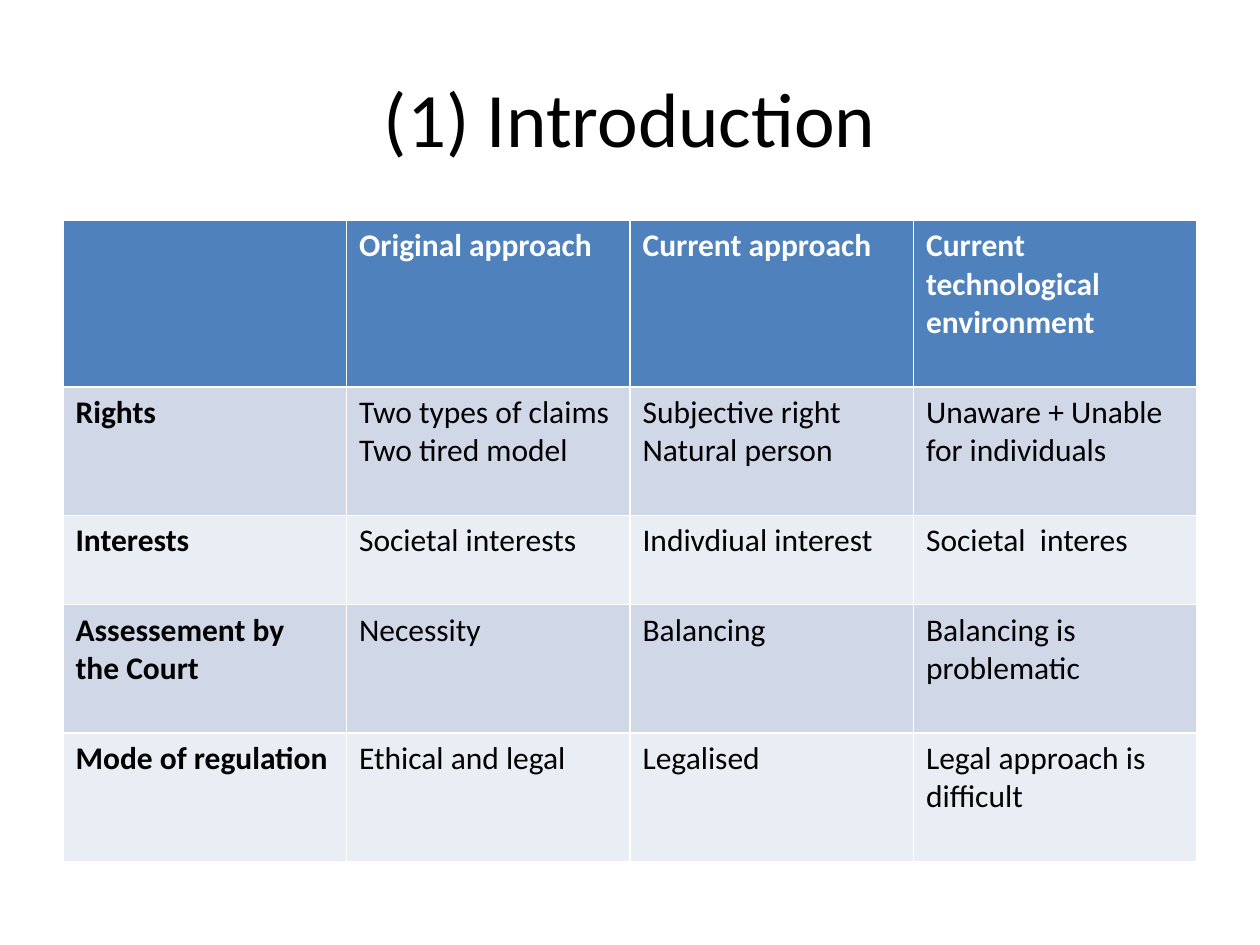
import pptx
import pptx.util
import pptx.dml.color
import pptx.enum.text

Inches = pptx.util.Inches
Pt = pptx.util.Pt
RGBColor = pptx.dml.color.RGBColor

BLACK = RGBColor(0x00, 0x00, 0x00)
WHITE = RGBColor(0xFF, 0xFF, 0xFF)
BLUE = RGBColor(0x4F, 0x81, 0xBD)
BANDS = [RGBColor(0xE9, 0xED, 0xF4), RGBColor(0xD0, 0xD8, 0xE8)]
FONT = "Calibri"

ROWS = [
    ["", "Original approach", "Current approach", "Current technological environment"],
    ["Rights", "Two types of claims\nTwo tired model", "Subjective right Natural person",
     "Unaware + Unable for individuals"],
    ["Interests", "Societal interests", "Indivdiual interest", "Societal  interes"],
    ["Assessement by the Court", "Necessity", "Balancing", "Balancing is problematic"],
    ["Mode of regulation", "Ethical and legal", "Legalised", "Legal approach is difficult"],
]
HEIGHTS = [1.32, 1.02, 0.71, 1.02, 1.02]


def style(para, size, color, bold=False):
    para.font.name = FONT
    para.font.size = Pt(size)
    para.font.color.rgb = color
    para.font.bold = bold


deck = pptx.Presentation()
deck.slide_width, deck.slide_height = Inches(10), Inches(7.5)
slide = deck.slides.add_slide(deck.slide_layouts[5])

title = slide.shapes.title
title.left, title.top = Inches(0.5), Inches(0.3)
title.width, title.height = Inches(9), Inches(1.25)
title.text_frame.text = "(1) Introduction"
title.text_frame.vertical_anchor = pptx.enum.text.MSO_ANCHOR.MIDDLE
head = title.text_frame.paragraphs[0]
head.alignment = pptx.enum.text.PP_ALIGN.CENTER
style(head, 44, BLACK)

# The default table style draws the white rules between cells.
table = slide.shapes.add_table(
    len(ROWS), len(ROWS[0]), Inches(0.5), Inches(1.75), Inches(9), Inches(sum(HEIGHTS))
).table
table.first_col = False

for r, texts in enumerate(ROWS):
    table.rows[r].height = Inches(HEIGHTS[r])
    for c, text in enumerate(texts):
        cell = table.cell(r, c)
        cell.fill.solid()
        cell.fill.fore_color.rgb = BANDS[r % 2] if r else BLUE
        cell.text = text
        for para in cell.text_frame.paragraphs:
            style(para, 18, BLACK if r else WHITE, r == 0 or c == 0)

deck.save("out.pptx")
